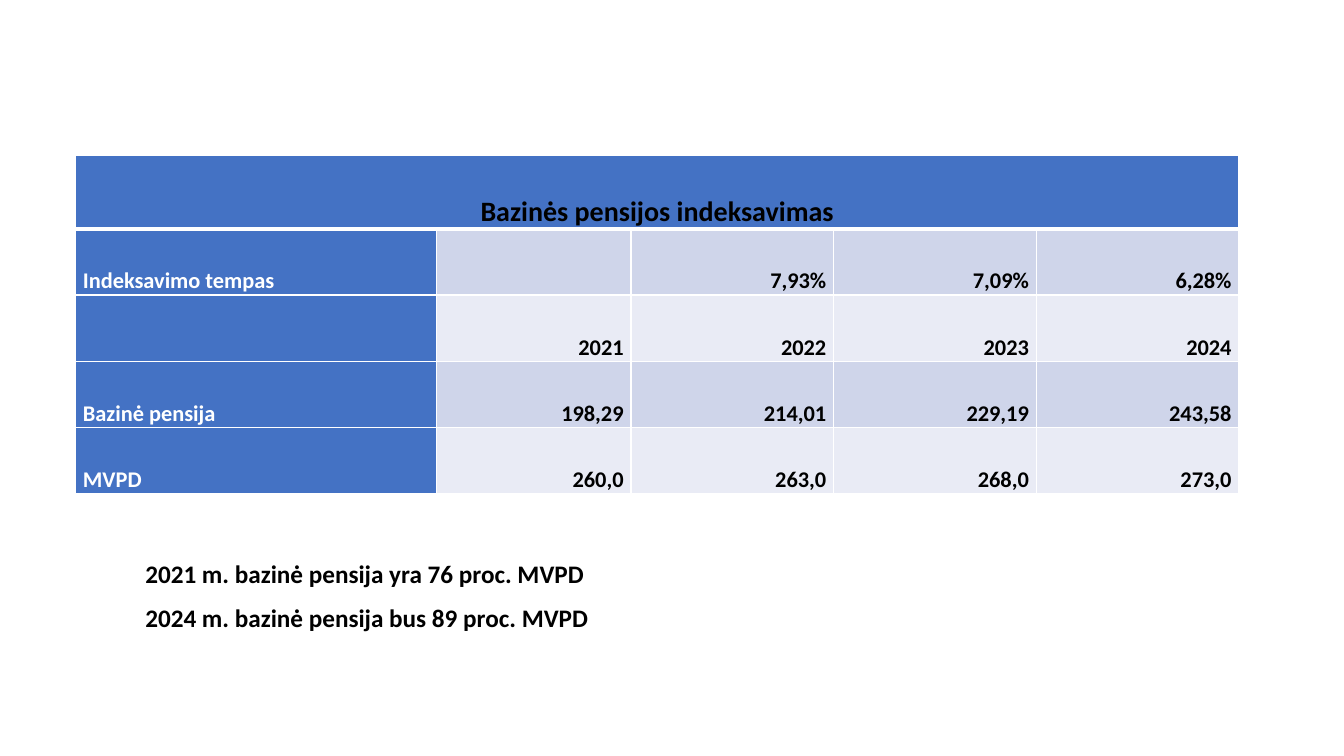
from dataclasses import dataclass

from lxml.etree import SubElement
from pptx import Presentation
from pptx.dml.color import RGBColor
from pptx.enum.text import MSO_ANCHOR as Anchor, MSO_AUTO_SIZE as AutoSize, PP_ALIGN as Align
from pptx.oxml.ns import qn
from pptx.util import Emu, Pt

PX = 9525  # EMU in one px, 96 px to the inch
FONT = "Calibri"
BLACK, WHITE, BLUE = "000000", "FFFFFF", "4472C4"
BANDS = ("CFD5EA", "E9EBF5")

COL_WIDTHS = (344, 185, 193, 193, 193)
ROW_HEIGHTS = (70, 63, 63, 63, 63)
TITLE = "Bazinės pensijos indeksavimas"
NOTES = (
    "2021 m. bazinė pensija yra 76 proc. MVPD",
    "2024 m. bazinė pensija bus 89 proc. MVPD",
)


@dataclass(frozen=True)
class PensionRow:
    label: str
    values: tuple[str, ...]


ROWS = (
    PensionRow("Indeksavimo tempas", ("", "7,93%", "7,09%", "6,28%")),
    PensionRow("", ("2021", "2022", "2023", "2024")),
    PensionRow("Bazinė pensija", ("198,29", "214,01", "229,19", "243,58")),
    PensionRow("MVPD", ("260,0", "263,0", "268,0", "273,0")),
)


def px(n: int) -> Emu:
    return Emu(n * PX)


def rgb(color: str) -> RGBColor:
    return RGBColor.from_string(color)


def write(p, text: str, size: int, color: str, align=Align.LEFT, spaced: bool = True) -> None:
    p.alignment = align
    if spaced:
        p.line_spacing, p.space_after = 1.07, Pt(8)
    if not text:
        p.font.size = Pt(size)
        return
    r = p.add_run()
    r.text = text
    r.font.name, r.font.size, r.font.bold = FONT, Pt(size), True
    r.font.color.rgb = rgb(color)


def set_borders(cell, bottom: int = 1, top: int = 1) -> None:
    tc_pr = cell._tc.get_or_add_tcPr()
    for side, width in (("L", 1), ("R", 1), ("T", top), ("B", bottom)):
        ln = SubElement(tc_pr, qn(f"a:ln{side}"), w=str(Pt(width)))
        fill = SubElement(ln, qn("a:solidFill"))
        SubElement(fill, qn("a:srgbClr"), val=WHITE)


def style_cell(cell, fill: str, bottom: int = 1, top: int = 1) -> None:
    set_borders(cell, bottom, top)  # borders precede the fill in the schema
    cell.fill.solid()
    cell.fill.fore_color.rgb = rgb(fill)
    cell.vertical_anchor = Anchor.BOTTOM
    cell.margin_left = cell.margin_right = px(7)
    cell.margin_top = cell.margin_bottom = 0


def add_pension_table(s) -> None:
    frame = s.shapes.add_table(len(ROW_HEIGHTS), len(COL_WIDTHS), px(72), px(148),
                               px(sum(COL_WIDTHS)), px(sum(ROW_HEIGHTS)))
    table = frame.table
    for column, width in zip(table.columns, COL_WIDTHS):
        column.width = px(width)
    for row, height in zip(table.rows, ROW_HEIGHTS):
        row.height = px(height)

    # Title row across all columns
    for cell in table.rows[0].cells:
        style_cell(cell, BLUE, bottom=3)
    title = table.cell(0, 0)
    title.merge(table.cell(0, len(COL_WIDTHS) - 1))
    write(title.text_frame.paragraphs[0], TITLE, 20, BLACK, Align.CENTER, spaced=False)

    # Label column and banded values
    for i, row in enumerate(ROWS):
        for j, text in enumerate((row.label, *row.values)):
            cell = table.cell(i + 1, j)
            is_label = j == 0
            style_cell(cell, BLUE if is_label else BANDS[i % 2], top=3 if i == 0 else 1)
            write(cell.text_frame.paragraphs[0], text, 16, WHITE if is_label else BLACK,
                  Align.LEFT if is_label else Align.RIGHT)


def add_notes_box(s) -> None:
    tf = s.shapes.add_textbox(px(129), px(525), px(912), px(82)).text_frame
    tf.word_wrap = True
    tf.auto_size = AutoSize.SHAPE_TO_FIT_TEXT
    for i, text in enumerate(NOTES):
        p = tf.add_paragraph() if i else tf.paragraphs[0]
        write(p, text, 18, BLACK)


def main() -> None:
    prs = Presentation()
    prs.slide_width, prs.slide_height = px(1280), px(720)
    s = prs.slides.add_slide(prs.slide_layouts[6])
    add_pension_table(s)
    add_notes_box(s)
    prs.save("out.pptx")


if __name__ == "__main__":
    main()
